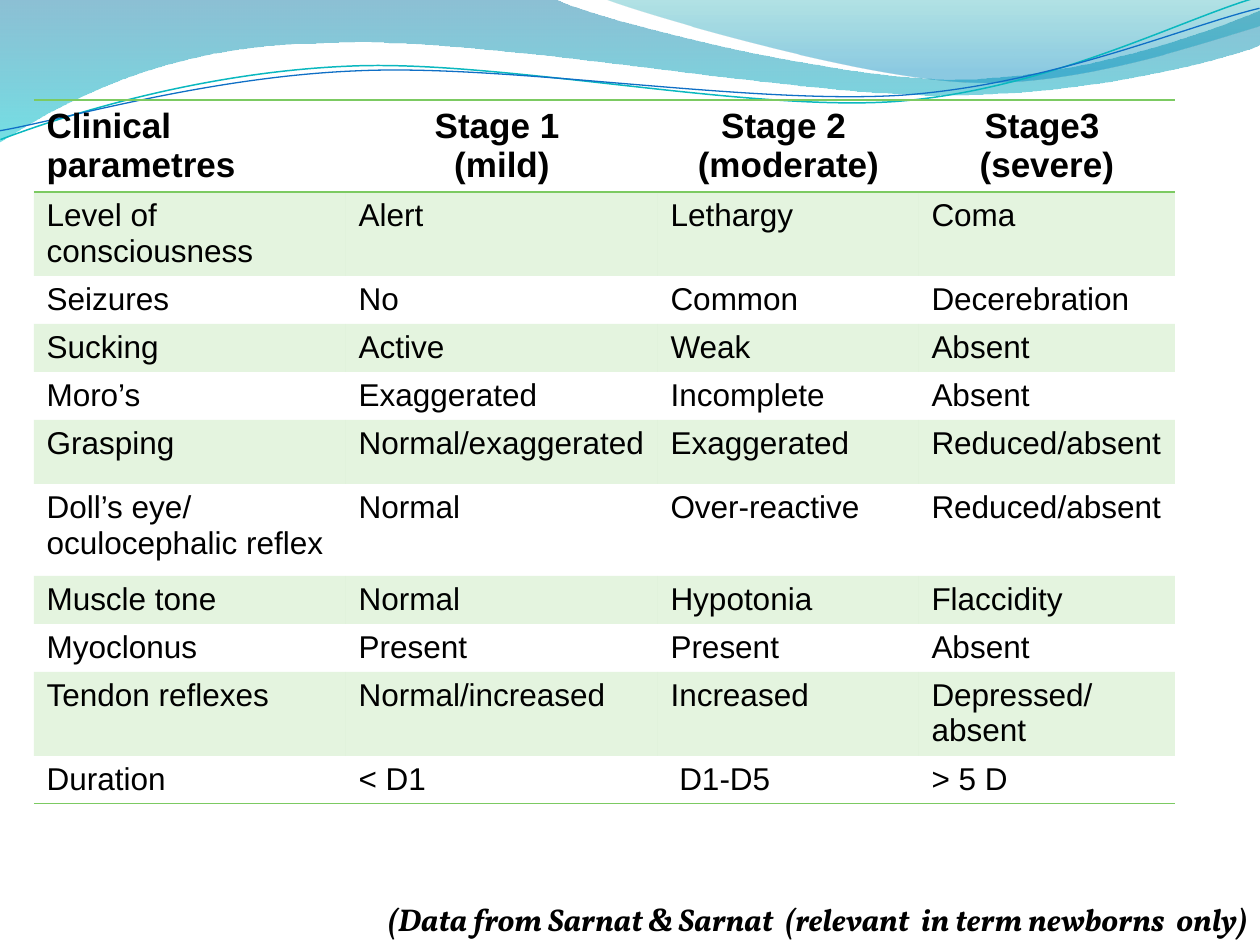
from dataclasses import dataclass

from lxml.etree import SubElement
from pptx import Presentation
from pptx.dml.color import RGBColor
from pptx.enum.text import MSO_AUTO_SIZE, PP_ALIGN
from pptx.oxml.ns import qn
from pptx.util import Emu, Pt

EMU_PER_PX = 914400 / 126


@dataclass(frozen=True)
class Theme:
    """Colours, fonts and type sizes of the slide."""

    text: str = "000000"
    green: str = "7CCA62"
    band_opacity: int = 20
    border: float = 1
    table_font: str = "Arial"
    source_font: str = "Vollkorn"
    header_size: int = 20
    body_size: int = 18
    wide_wave: tuple = ((0, "0074A1", 45), (1, "00C6CF", 55))
    right_wave: tuple = ((0, "00A1A9", 30), (0.8, "008BBF", 45))
    teal_line: tuple = ("0AB8BF", 0.85)
    blue_line: tuple = ("0F6FC6", 0.75)


THEME = Theme()

WIDE_WAVE = [
    [(0, -1)], [(554, -1)],
    [(600, 21), (837, 79), (955, 79)], [(1075, 79), (1207, 33), (1260, 11)],
    [(1261, 45)],
    [(1239, 55), (1096, 96), (940, 95)], [(784, 95), (481, 35), (324, 43)],
    [(163, 44), (58, 105), (-1, 142)],
]
RIGHT_WAVE = [
    [(604, -1)],
    [(641, 14), (859, 78), (969, 82)], [(1079, 87), (1211, 40), (1260, 26)],
    [(1260, 0)],
]
LINE_ROTATION = 357.3
TEAL_LINE = [
    [(-2, 110)],
    [(59, 90), (199, 52), (350, 53)], [(499, 53), (745, 118), (896, 114)],
    [(1048, 109), (1184, 45), (1260, 27)],
]
BLUE_LINE = [
    [(-2, 101)],
    [(57, 94), (207, 57), (357, 58)], [(509, 58), (750, 111), (902, 108)],
    [(1052, 104), (1188, 52), (1262, 38)],
]

COLUMN_WIDTHS = [312, 312, 261, 256]
ROWS = [
    (92, ["Clinical parametres", "Stage 1 \n(mild)", "Stage 2 \n(moderate)", "Stage3 \n(severe)"]),
    (84, ["Level of consciousness", "Alert", "Lethargy", "Coma"]),
    (48, ["Seizures", "No", "Common", "Decerebration"]),
    (48, ["Sucking", "Active", "Weak", "Absent"]),
    (48, ["Moro’s", "Exaggerated", "Incomplete", "Absent"]),
    (64, ["Grasping", "Normal/exaggerated", "Exaggerated", "Reduced/absent"]),
    (92, ["Doll’s eye/\noculocephalic reflex", "Normal", "Over-reactive", "Reduced/absent"]),
    (48, ["Muscle tone", "Normal", "Hypotonia", "Flaccidity"]),
    (48, ["Myoclonus", "Present", "Present", "Absent"]),
    (84, ["Tendon reflexes", "Normal/increased", "Increased", "Depressed/absent"]),
    (48, ["Duration", "< D1", " D1-D5", "> 5 D"]),
]
SOURCE = "(Data from Sarnat & Sarnat  (relevant  in term newborns  only)"
PLAIN_TABLE_STYLE = "{2D5ABB26-0587-4C30-8999-92F81FD0307C}"


def px(length):
    """Turn pixels into EMU."""
    return Emu(round(length * EMU_PER_PX))


def apply_format(target, values):
    """Set each named attribute on the target."""
    for name, value in values.items():
        setattr(target, name, value)


def format_text(text_frame, alignment, font_values):
    """Give every paragraph one alignment and font."""
    for paragraph in text_frame.paragraphs:
        paragraph.alignment = alignment
        for run in paragraph.runs:
            apply_format(run.font, font_values)
            run.font.color.rgb = RGBColor.from_string(THEME.text)


def set_opacity(color_element, percent):
    """Add an alpha value to a colour element."""
    SubElement(color_element, qn("a:alpha")).set("val", str(percent * 1000))


def bend(shape, segments):
    """Join the three straight steps of each curved segment into one curve."""
    steps = iter(list(shape._element.iter(qn("a:lnTo"))))
    for segment in segments[1:]:
        first, *others = [next(steps) for _ in segment]
        if others:
            first.tag = qn("a:cubicBezTo")
            for step in others:
                first.append(step[0])
                step.getparent().remove(step)


def add_outline(slide, segments, closed):
    """Add a curved outline without a shadow."""
    points = [(px(x), px(y)) for segment in segments for x, y in segment]
    builder = slide.shapes.build_freeform(*points[0])
    builder.add_line_segments(points[1:], close=closed)
    shape = builder.convert_to_shape()
    bend(shape, segments)
    shape.shadow.inherit = False
    return shape


def add_wave(slide, segments, stops):
    """Add a wave with a see-through downward gradient."""
    shape = add_outline(slide, segments, closed=True)
    shape.line.fill.background()
    shape.fill.gradient()
    shape.fill.gradient_angle = 270
    for stop, (position, color, _) in zip(shape.fill.gradient_stops, stops):
        stop.position = position
        stop.color.rgb = RGBColor.from_string(color)
    colors = list(shape._element.spPr.iter(qn("a:srgbClr")))
    for element, (_, _, opacity) in zip(colors, stops):
        set_opacity(element, opacity)


def add_wave_line(slide, segments, style):
    """Add a thin, slightly turned curved line."""
    color, width = style
    shape = add_outline(slide, segments, closed=False)
    shape.rotation = LINE_ROTATION
    shape.fill.background()
    shape.line.color.rgb = RGBColor.from_string(color)
    shape.line.width = Pt(width)


def add_border(cell, side):
    """Add a green border to one side of a cell."""
    properties = cell._tc.get_or_add_tcPr()
    line = SubElement(properties, qn(f"a:ln{side}"), w=str(Pt(THEME.border)))
    fill = SubElement(line, qn("a:solidFill"))
    SubElement(fill, qn("a:srgbClr"), val=THEME.green)


def fill_band(cell):
    """Fill a cell with the pale band colour."""
    cell.fill.solid()
    cell.fill.fore_color.rgb = RGBColor.from_string(THEME.green)
    color = cell._tc.tcPr.find(qn("a:solidFill")).find(qn("a:srgbClr"))
    set_opacity(color, THEME.band_opacity)


def format_cell(cell, row, column):
    """Style a cell by its place in the table."""
    is_header = row == 0
    sides = "TB" if is_header else "B" if row == len(ROWS) - 1 else ""
    for side in sides:
        add_border(cell, side)
    if row % 2:
        fill_band(cell)
    else:
        cell.fill.background()
    size = THEME.header_size if is_header else THEME.body_size
    alignment = PP_ALIGN.CENTER if is_header and column else PP_ALIGN.LEFT
    font_values = {"name": THEME.table_font, "size": Pt(size), "bold": is_header}
    format_text(cell.text_frame, alignment, font_values)


def add_stage_table(slide, left, top):
    """Add the table of clinical stages."""
    width, height = sum(COLUMN_WIDTHS), sum(height for height, _ in ROWS)
    frame = slide.shapes.add_table(
        len(ROWS), len(COLUMN_WIDTHS), px(left), px(top), px(width), px(height))
    table = frame.table
    table._tbl.tblPr.find(qn("a:tableStyleId")).text = PLAIN_TABLE_STYLE
    for column, column_width in zip(table.columns, COLUMN_WIDTHS):
        column.width = px(column_width)
    for row, (row_height, texts) in enumerate(ROWS):
        table.rows[row].height = px(row_height)
        for column, text in enumerate(texts):
            cell = table.cell(row, column)
            cell.text = text
            format_cell(cell, row, column)


def add_source(slide, left, top, width, height):
    """Add the right-aligned source line."""
    text_frame = slide.shapes.add_textbox(px(left), px(top), px(width), px(height)).text_frame
    apply_format(text_frame, {
        "word_wrap": True, "auto_size": MSO_AUTO_SIZE.SHAPE_TO_FIT_TEXT, "text": SOURCE})
    format_text(text_frame, PP_ALIGN.RIGHT, {
        "name": THEME.source_font, "size": Pt(THEME.body_size), "bold": True, "italic": True})


def main():
    """Build and save the slide."""
    presentation = Presentation()
    apply_format(presentation, {"slide_width": px(1260), "slide_height": px(945)})
    slide = presentation.slides.add_slide(presentation.slide_layouts[6])
    add_wave(slide, WIDE_WAVE, THEME.wide_wave)
    add_wave(slide, RIGHT_WAVE, THEME.right_wave)
    add_wave_line(slide, TEAL_LINE, THEME.teal_line)
    add_wave_line(slide, BLUE_LINE, THEME.blue_line)
    add_stage_table(slide, 34, 100)
    add_source(slide, 199, 894, 1061, 50)
    presentation.save("out.pptx")


if __name__ == "__main__":
    main()
